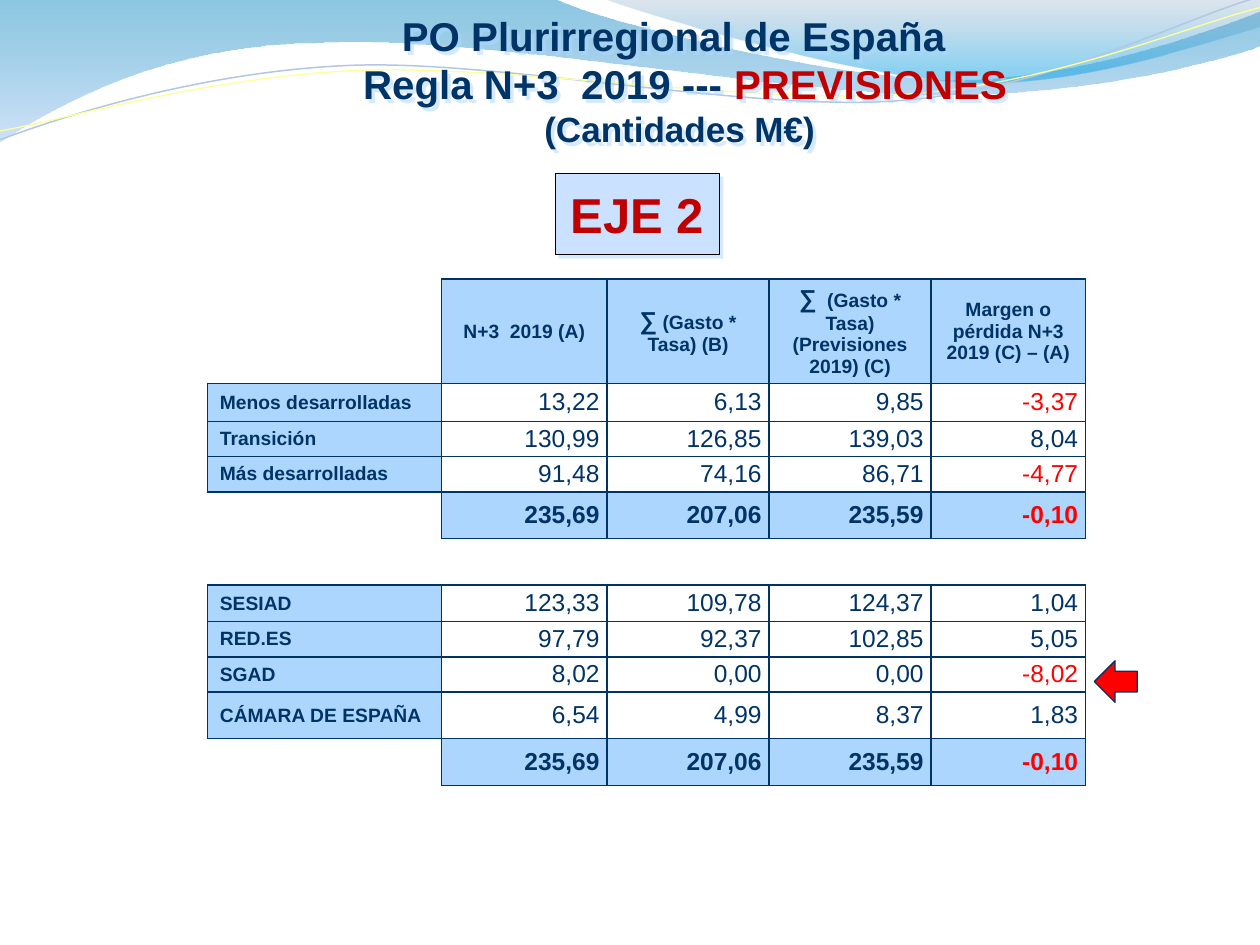
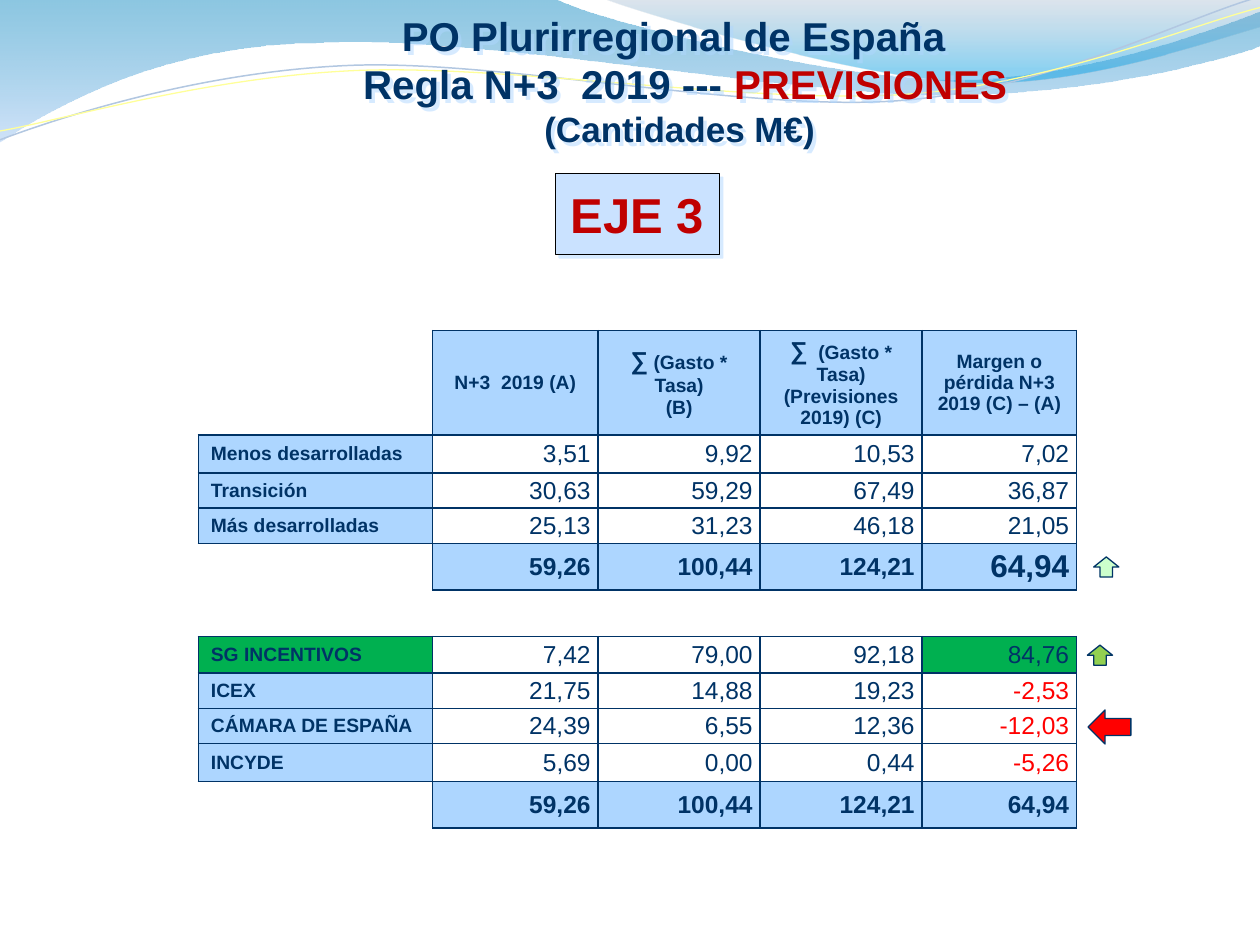
from dataclasses import dataclass
from typing import NamedTuple

from lxml import etree
from pptx import Presentation
from pptx import util as u
from pptx.dml.color import RGBColor
from pptx.enum import shapes, text
from pptx.oxml.ns import qn

SLIDE_W, SLIDE_H = u.Inches(10), u.Inches(7.5)
COLUMNS, ROWS = 100, 75


@dataclass(frozen=True)
class Theme:
    font: str = "Arial"
    navy: str = "003366"
    crimson: str = "C00000"
    red: str = "FF0000"
    black: str = "000000"
    cell: str = "ADD6FF"
    badge: str = "CAE2FF"
    shadow: str = "AFD7FF"
    green: str = "00B050"
    lime: str = "92D050"
    mint: str = "CCFFCC"
    title_pt: float = 23
    subtitle_pt: float = 20
    badge_pt: float = 28
    label_pt: float = 11
    value_pt: float = 14
    emphasis_pt: float = 18
    line_pt: float = 0.75
    border_pt: float = 1


T = Theme()


class Box(NamedTuple):
    left: float
    top: float
    width: float
    height: float


class Stop(NamedTuple):
    position: float
    color: str
    opacity: int


class Wave(NamedTuple):
    start: tuple
    segments: list
    stops: tuple = ()
    line: str = ""
    line_pt: float = 0


class Row(NamedTuple):
    label: str
    values: str
    height: float = 2.8
    total: bool = False
    highlight: bool = False
    emphasis: bool = False


class Arrow(NamedTuple):
    box: Box
    rotation: float
    color: str


class Page(NamedTuple):
    axis: str
    left: float
    top: float
    headers: list
    rows: list
    arrows: list


TITLE_BOX = Box(17.6, 2.45, 72.7, 7.9)
BADGE_BOX = Box(44.1, 13.8, 13, 6.4)
TABLE_COLUMNS = [18.6, 13.14, 12.86, 12.86, 12.26]
HEADER_HEIGHT = 8.2
GAP = Row("", "", 3.7)

WAVES = [
    Wave((0, -0.1), [[(44, -0.1)],
                     [(47.6, 1.7), (66.4, 6.3), (75.8, 6.3)],
                     [(85.3, 6.3), (95.8, 2.6), (100, 0.9)],
                     [(100.1, 3.6)],
                     [(98.3, 4.4), (87, 7.6), (74.6, 7.5)],
                     [(62.2, 7.5), (38.2, 2.8), (25.7, 3.4)],
                     [(12.9, 3.5), (4.6, 8.3), (-0.1, 11.3)]],
         (Stop(0, "0082BD", 45), Stop(1, "AACCF5", 55))),
    Wave((47.9, -0.1), [[(50.9, 1.1), (68.2, 6.2), (76.9, 6.5)],
                        [(85.6, 6.9), (96.1, 3.2), (100, 2.1)],
                        [(100, 0)]],
         (Stop(0, "90A7C3", 30), Stop(0.8, "009CE2", 45))),
    Wave((0, 11.1), [[(4.8, 9.3), (15.8, 5.7), (27.7, 5.2)],
                     [(39.5, 4.7), (59.3, 8.9), (71.3, 8)],
                     [(83.3, 7.1), (93.8, 1.5), (99.8, -0.2)]],
         line="B2C7E1", line_pt=0.85),
    Wave((0, 10.4), [[(4.7, 9.6), (16.4, 6.1), (28.3, 5.6)],
                     [(40.3, 5.1), (59.7, 8.3), (71.7, 7.5)],
                     [(83.6, 6.7), (94.1, 2.1), (100, 0.6)]],
         line="FFFF99", line_pt=0.75),
]

MARGIN_HEADER = "Margen o pérdida N+3 2019 (C) – (A)"
PAGES = [
    Page("EJE 2", 16.45, 22.15,
         ["", "N+3  2019 (A)", "∑ (Gasto * Tasa) (B)",
          "∑  (Gasto * Tasa) (Previsiones 2019) (C)", MARGIN_HEADER],
         [Row("Menos desarrolladas", "13,22 6,13 9,85 -3,37", 3),
          Row("Transición", "130,99 126,85 139,03 8,04"),
          Row("Más desarrolladas", "91,48 74,16 86,71 -4,77"),
          Row("", "235,69 207,06 235,59 -0,10", 3.7, total=True),
          GAP,
          Row("SESIAD", "123,33 109,78 124,37 1,04", 2.9),
          Row("RED.ES", "97,79 92,37 102,85 5,05"),
          Row("SGAD", "8,02 0,00 0,00 -8,02"),
          Row("CÁMARA DE ESPAÑA", "6,54 4,99 8,37 1,83", 3.7),
          Row("", "235,69 207,06 235,59 -0,10", 3.7, total=True)],
         [Arrow(Box(86.9, 52.4, 3.3, 3.4), 90, T.red)]),
    Page("EJE 3", 15.74, 26.24,
         ["", "N+3  2019 (A)", "∑ (Gasto * Tasa)\n(B)",
          "∑  (Gasto * Tasa)\n(Previsiones 2019) (C)", MARGIN_HEADER],
         [Row("Menos desarrolladas", "3,51 9,92 10,53 7,02", 3),
          Row("Transición", "30,63 59,29 67,49 36,87"),
          Row("Más desarrolladas", "25,13 31,23 46,18 21,05"),
          Row("", "59,26 100,44 124,21 64,94", 3.7, total=True, emphasis=True),
          GAP,
          Row("SG INCENTIVOS", "7,42 79,00 92,18 84,76", 2.9, highlight=True),
          Row("ICEX", "21,75 14,88 19,23 -2,53"),
          Row("CÁMARA DE ESPAÑA", "24,39 6,55 12,36 -12,03"),
          Row("INCYDE", "5,69 0,00 0,44 -5,26", 3),
          Row("", "59,26 100,44 124,21 64,94", 3.7, total=True)],
         [Arrow(Box(86.7, 56, 2.7, 3.4), 90, T.red),
          Arrow(Box(86.3, 51.2, 2, 1.6), 180, T.lime),
          Arrow(Box(86.8, 44.2, 2, 1.6), 180, T.mint)]),
]


def across(columns: float) -> int:
    return round(SLIDE_W * columns / COLUMNS)


def down(rows: float) -> int:
    return round(SLIDE_H * rows / ROWS)


def place(box: Box) -> tuple:
    return across(box.left), down(box.top), across(box.width), down(box.height)


def rgb(color: str) -> RGBColor:
    return RGBColor.from_string(color)


def set_font(font, size: float, color: str, bold: bool = True) -> None:
    font.name, font.size, font.bold = T.font, u.Pt(size), bold
    font.color.rgb = rgb(color)


def paint(sp, fill: str, line: str) -> None:
    sp.shadow.inherit = False
    sp.fill.solid()
    sp.fill.fore_color.rgb = rgb(fill)
    sp.line.color.rgb = rgb(line)
    sp.line.width = u.Pt(T.line_pt)


def add_shadow(sp) -> None:
    sp.shadow.inherit = False
    effects = sp.element.spPr.find(qn("a:effectLst"))
    outer = etree.SubElement(effects, qn("a:outerShdw"), blurRad="0", dist=str(u.Pt(2.8)),
                             dir="2700000", algn="ctr", rotWithShape="0")
    color = etree.SubElement(outer, qn("a:srgbClr"), val=T.shadow)
    etree.SubElement(color, qn("a:alpha"), val="50000")


def bend(sp, wave: Wave) -> None:
    nodes = iter(list(sp.element.iter(qn("a:lnTo"))))
    for segment in wave.segments:
        group = [next(nodes) for _ in segment]
        if len(group) == 3:
            cubic = etree.Element(qn("a:cubicBezTo"))
            group[0].addprevious(cubic)
            for node in group:
                cubic.append(node[0])
                node.getparent().remove(node)


def draw_wave(s, wave: Wave):
    first, *rest = [(across(x), down(y))
                    for x, y in [wave.start, *(point for seg in wave.segments for point in seg)]]
    builder = s.shapes.build_freeform(*first)
    builder.add_line_segments(rest, close=bool(wave.stops))
    sp = builder.convert_to_shape()
    bend(sp, wave)
    sp.shadow.inherit = False
    if not wave.stops:
        sp.fill.background()
        sp.line.color.rgb = rgb(wave.line)
        sp.line.width = u.Pt(wave.line_pt)
        return sp
    sp.line.fill.background()
    sp.fill.gradient()
    sp.fill.gradient_angle = 270
    for target, stop in zip(sp.fill.gradient_stops, wave.stops):
        target.position = stop.position
        target.color.rgb = rgb(stop.color)
    for color, stop in zip(sp.element.spPr.iter(qn("a:srgbClr")), wave.stops):
        etree.SubElement(color, qn("a:alpha"), val=str(stop.opacity * 1000))
    return sp


def decorate_layout(layout, s) -> None:
    for ph in list(layout.placeholders):
        if ph.placeholder_format.idx:
            ph.element.getparent().remove(ph.element)
    for sp in [draw_wave(s, wave) for wave in WAVES]:
        layout.shapes.element.append(sp.element)


def draw_title(s) -> None:
    sp = s.shapes.title
    sp.left, sp.top, sp.width, sp.height = place(TITLE_BOX)
    add_shadow(sp)
    tf = sp.text_frame
    tf.auto_size, tf.vertical_anchor = text.MSO_AUTO_SIZE.NONE, text.MSO_ANCHOR.MIDDLE
    p = tf.paragraphs[0]
    p.alignment = text.PP_ALIGN.CENTER
    for content, size, color, breaks in (
            ("PO Plurirregional de España ", T.title_pt, T.navy, True),
            (" Regla N+3  2019 --- ", T.title_pt, T.navy, False),
            ("PREVISIONES", T.title_pt, T.crimson, True),
            ("(Cantidades M€)", T.subtitle_pt, T.navy, False)):
        r = p.add_run()
        r.text = content
        set_font(r.font, size, color)
        if breaks:
            p.add_line_break()


def draw_badge(s, axis: str) -> None:
    sp = s.shapes.add_shape(shapes.MSO_SHAPE.RECTANGLE, *place(BADGE_BOX))
    paint(sp, T.badge, T.black)
    add_shadow(sp)
    tf = sp.text_frame
    tf.vertical_anchor = text.MSO_ANCHOR.MIDDLE
    p = tf.paragraphs[0]
    p.text, p.alignment = axis, text.PP_ALIGN.CENTER
    set_font(p.font, T.badge_pt, T.crimson)


def set_borders(cell, grid: list, i: int, j: int) -> None:
    def filled(row: int, col: int) -> bool:
        return 0 <= row < len(grid) and 0 <= col < len(grid[0]) and bool(grid[row][col])

    tc_pr = cell._tc.get_or_add_tcPr()
    for side, di, dj in (("L", 0, -1), ("R", 0, 1), ("T", -1, 0), ("B", 1, 0)):
        ln = etree.SubElement(tc_pr, qn(f"a:ln{side}"), w=str(u.Pt(T.border_pt)))
        if filled(i, j) or filled(i + di, j + dj):
            fill = etree.SubElement(ln, qn("a:solidFill"))
            etree.SubElement(fill, qn("a:srgbClr"), val=T.navy)
        else:
            etree.SubElement(ln, qn("a:noFill"))


def write_cell(cell, content: str, header: bool, label: bool, row: Row, last: bool) -> None:
    wide = bool(content) and (header or label)
    cell.margin_left = cell.margin_right = across(1 if wide else 0)
    cell.margin_top = cell.margin_bottom = down(0.5 if wide else 0)
    cell.vertical_anchor = text.MSO_ANCHOR.MIDDLE
    if not wide:
        cell.margin_right = across(0.6)
    size = T.label_pt if wide or not content else T.value_pt
    if row.emphasis and last:
        size = T.emphasis_pt
    color = T.red if content.startswith("-") else T.navy
    tf = cell.text_frame
    for n, line in enumerate(content.split("\n")):
        p = tf.add_paragraph() if n else tf.paragraphs[0]
        p.alignment = (text.PP_ALIGN.CENTER if header else
                       text.PP_ALIGN.LEFT if label else text.PP_ALIGN.RIGHT)
        set_font(p.font, size, color, wide or row.total)
        symbol = "∑" if line.startswith("∑") else ""
        for part in filter(None, (symbol, line[len(symbol):])):
            r = p.add_run()
            r.text = part
            if part == "∑":
                r.font.size = u.Pt(T.value_pt)
    if row.highlight and (label or last):
        fill = T.green
    else:
        fill = T.cell if wide or row.total and content else None
    if fill:
        cell.fill.solid()
        cell.fill.fore_color.rgb = rgb(fill)
    else:
        cell.fill.background()


def draw_table(s, page: Page) -> None:
    rows = [Row("", "", HEADER_HEIGHT), *page.rows]
    grid = [page.headers] + [[row.label, *(row.values.split() or [""] * 4)] for row in page.rows]
    box = Box(page.left, page.top, sum(TABLE_COLUMNS), sum(row.height for row in rows))
    table = s.shapes.add_table(len(rows), len(TABLE_COLUMNS), *place(box)).table
    table.first_row = table.horz_banding = False
    for column, width in zip(table.columns, TABLE_COLUMNS):
        column.width = across(width)
    for i, row in enumerate(rows):
        table.rows[i].height = down(row.height)
        for j, content in enumerate(grid[i]):
            cell = table.cell(i, j)
            set_borders(cell, grid, i, j)
            write_cell(cell, content, i == 0, j == 0, row, j == len(TABLE_COLUMNS) - 1)


def draw_arrow(s, arrow: Arrow) -> None:
    sp = s.shapes.add_shape(shapes.MSO_SHAPE.DOWN_ARROW, *place(arrow.box))
    sp.rotation = arrow.rotation
    paint(sp, arrow.color, T.navy)


def main() -> None:
    prs = Presentation()
    prs.slide_width, prs.slide_height = SLIDE_W, SLIDE_H
    layout = prs.slide_layouts[5]
    for page in PAGES:
        s = prs.slides.add_slide(layout)
        if page is PAGES[0]:
            decorate_layout(layout, s)
        draw_title(s)
        draw_badge(s, page.axis)
        draw_table(s, page)
        for arrow in page.arrows:
            draw_arrow(s, arrow)
    prs.save("out.pptx")


if __name__ == "__main__":
    main()
